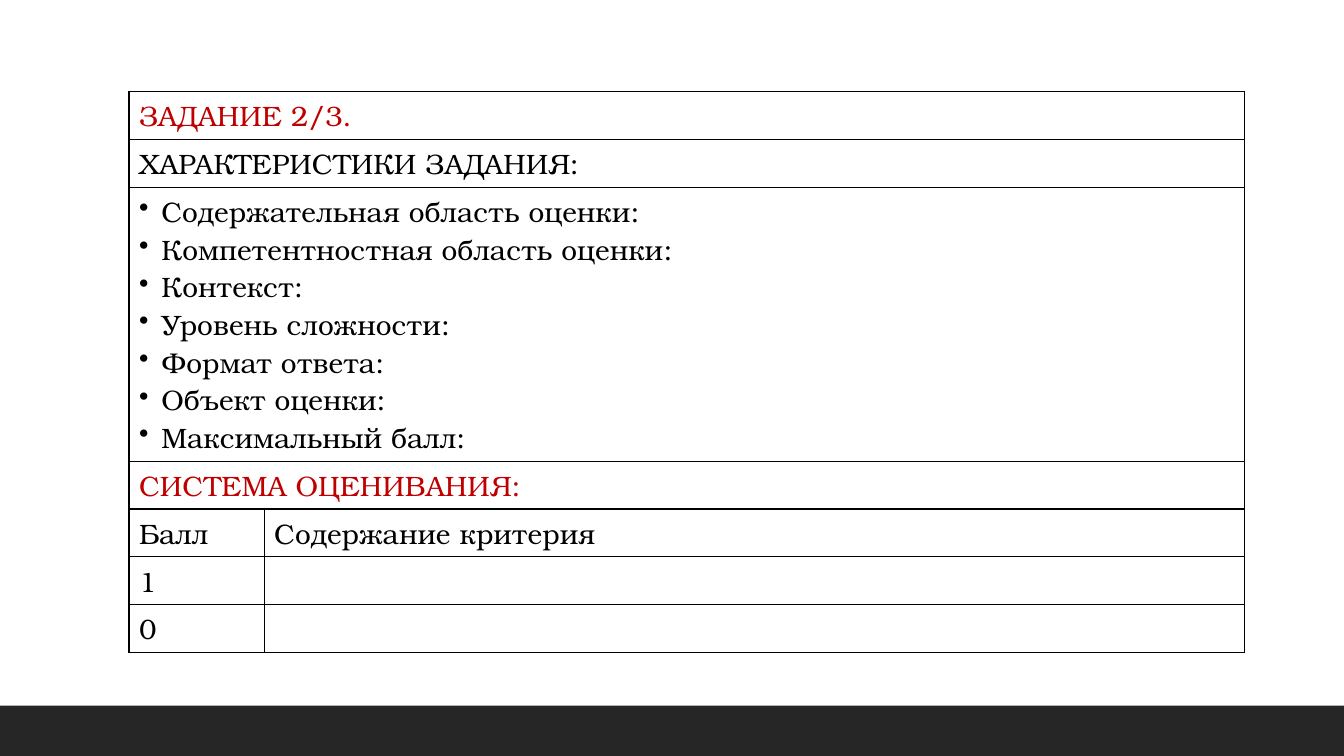
from lxml.etree import SubElement
from pptx import Presentation
from pptx.dml.color import RGBColor
from pptx.enum.shapes import MSO_SHAPE
from pptx.oxml import parse_xml
from pptx.oxml.ns import nsdecls, qn
from pptx.util import Inches, Pt

RED, BLACK, DARK = "C00000", "000000", "262626"
WIDE, HIGH = Inches(13.33), Inches(7.5)
ROW = 0.475  # height of a one-line row, inches


def color(code):
    return RGBColor.from_string(code)


def write(cell, text, tint=BLACK, size=20, font="TeX Gyre Bonum", bullet=False):
    cell.text = text
    for par in cell.text_frame.paragraphs:
        par.font.size = Pt(size)
        for run in par.runs:
            run.font.size = Pt(size)
            run.font.name = font
            run.font.bold = False
            run.font.color.rgb = color(tint)
        if bullet:
            props = par._p.get_or_add_pPr()
            props.set("marL", str(Inches(0.22)))
            props.set("indent", str(-Inches(0.22)))
            mark = parse_xml(f'<a:buChar {nsdecls("a")} char="•"/>')
            props.insert_element_before(mark, "a:tabLst", "a:defRPr", "a:extLst")


deck = Presentation()
deck.slide_width, deck.slide_height = WIDE, HIGH
slide = deck.slides.add_slide(deck.slide_layouts[6])

# Dark band along the bottom
band = slide.shapes.add_shape(MSO_SHAPE.RECTANGLE, 0, Inches(7), WIDE, Inches(0.5))
band.shadow.inherit = False
band.fill.solid()
band.fill.fore_color.rgb = color(DARK)
band.line.fill.background()

# Task table
traits = "\n".join([
    "Содержательная область оценки:",
    "Компетентностная область оценки:",
    "Контекст:",
    "Уровень сложности:",
    "Формат ответа:",
    "Объект оценки:",
    "Максимальный балл:",
])
rows = [
    ["ЗАДАНИЕ 2/3."],
    ["ХАРАКТЕРИСТИКИ ЗАДАНИЯ:"],
    [traits],
    ["СИСТЕМА ОЦЕНИВАНИЯ:"],
    ["Балл", "Содержание критерия"],
    ["1", ""],
    ["0", ""],
]
heights = [ROW, ROW, 2.71, ROW, ROW, ROW, ROW]
widths = [1.34, 9.72]

grid = slide.shapes.add_table(
    len(rows), len(widths), Inches(1.28), Inches(0.91),
    Inches(sum(widths)), Inches(sum(heights))).table
grid.first_row = grid.horz_banding = False
for col, width in zip(grid.columns, widths):
    col.width = Inches(width)

for i, texts in enumerate(rows):
    grid.rows[i].height = Inches(heights[i])
    if len(texts) == 1:
        grid.cell(i, 0).merge(grid.cell(i, 1))
    for j, text in enumerate(texts):
        write(grid.cell(i, j), text, tint=RED if i in (0, 3) else BLACK,
              bullet=text == traits)

# Thin black borders, no fill
for cell in grid.iter_cells():
    props = cell._tc.get_or_add_tcPr()
    for side in ("lnL", "lnR", "lnT", "lnB"):
        edge = SubElement(props, qn(f"a:{side}"), w=str(Pt(1)))
        ink = SubElement(edge, qn("a:solidFill"))
        SubElement(ink, qn("a:srgbClr"), val=BLACK)
    cell.fill.background()

deck.save("out.pptx")
